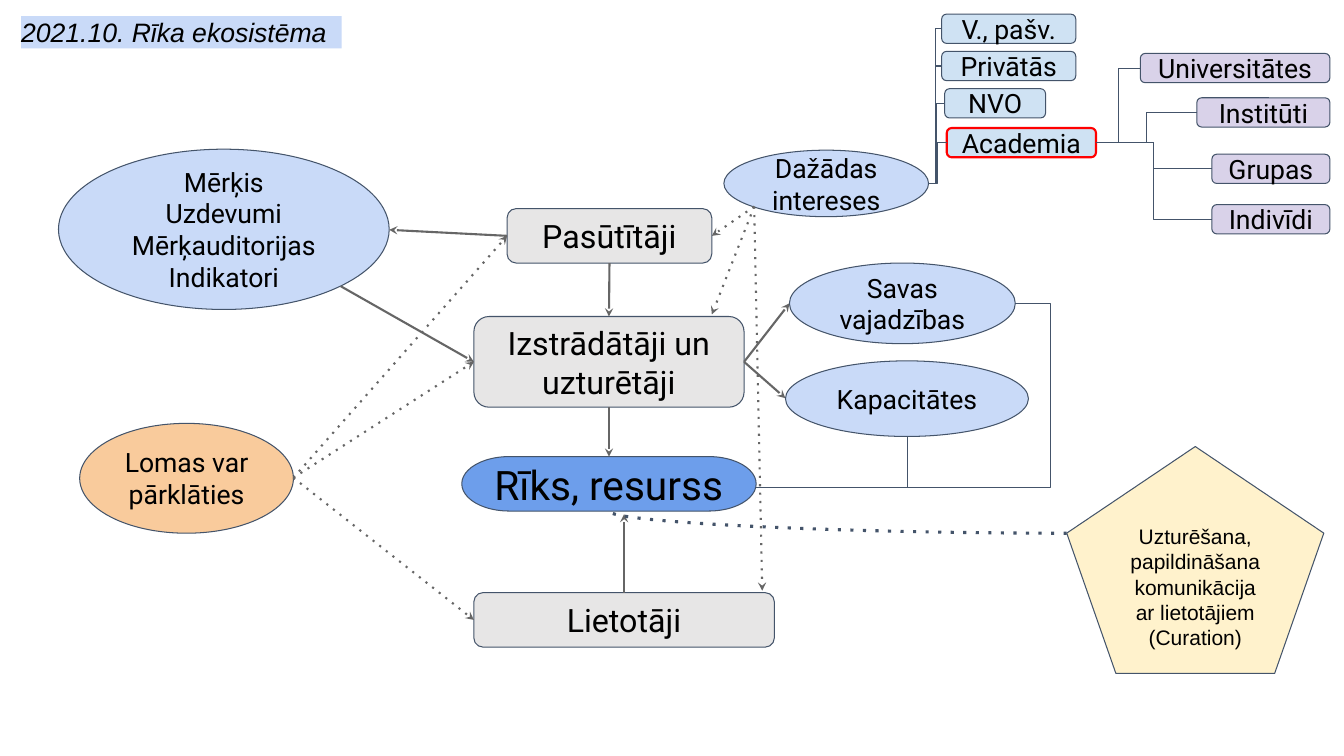
import pptx
import pptx.util
import pptx.dml.color
import pptx.enum.shapes
import pptx.enum.text
import pptx.oxml.ns
from lxml import etree

SHAPE = pptx.enum.shapes.MSO_SHAPE
LINK = pptx.enum.shapes.MSO_CONNECTOR
Inches, Pt = pptx.util.Inches, pptx.util.Pt
qn = pptx.oxml.ns.qn

COLORS = {
    "ink": "000000", "outline": "44546A", "arrow": "666666", "alert": "FF0000",
    "grey": "E7E6E6", "pale blue": "C9DAF8", "sky": "CFE2F3", "lilac": "D9D2E9",
    "blue": "6D9EEB", "orange": "F9CB9C", "cream": "FFF2CC",
}
TITLE = ("2021.10. Rīka ekosistēma", (0.21, 0.16, 3.18, 0.32))

# kind: preset shape, fill, font, text size
KINDS = {
    "role": (SHAPE.ROUNDED_RECTANGLE, "grey", "Roboto", 23),
    "topic": (SHAPE.FLOWCHART_CONNECTOR, "pale blue", "Roboto", 19),
    "overlap": (SHAPE.FLOWCHART_CONNECTOR, "orange", "Roboto", 19),
    "sector": (SHAPE.ROUNDED_RECTANGLE, "sky", "Roboto", 19),
    "unit": (SHAPE.ROUNDED_RECTANGLE, "lilac", "Roboto", 19),
    "tool": (SHAPE.FLOWCHART_TERMINATOR, "blue", "Roboto", 29),
    "curation": (SHAPE.REGULAR_PENTAGON, "cream", "Arial", 15),
}
TAG_H = 0.29
UNIT_RIGHT = 13.19
SECTORS = [  # text, left, top, width
    ("V., pašv.", 9.34, 0.14, 1.33),
    ("Privātās", 9.34, 0.51, 1.33),
    ("NVO", 9.37, 0.88, 1.0),
    ("Academia", 9.39, 1.27, 1.48),
]
UNITS = [  # text, top, width
    ("Universitātes", 0.53, 1.88),
    ("Institūti", 0.97, 1.32),
    ("Grupas", 1.53, 1.17),
    ("Indivīdi", 2.03, 1.17),
]
NODES = {  # name: kind, text, left, top, width, height
    "needs": ("topic", "Savas vajadzības", 7.83, 2.61, 2.24, 0.8),
    "makers": ("role", "Izstrādātāji un uzturētāji", 4.7, 3.14, 2.68, 0.9),
    "clients": ("role", "Pasūtītāji", 5.03, 2.07, 2.03, 0.54),
    "users": ("role", "Lietotāji", 4.7, 5.88, 2.98, 0.54),
    "goals": ("topic", "Mērķis\nUzdevumi\nMērķauditorijas\nIndikatori", 0.58, 1.48, 3.28, 1.59),
    "capacity": ("topic", "Kapacitātes", 7.79, 3.58, 2.41, 0.75),
    "interests": ("topic", "Dažādas intereses", 7.18, 1.49, 2.03, 0.66),
    "curation": ("curation", "Uzturēšana, papildināšana\vkomunikācija ar lietotājiem (Curation)",
                 10.58, 4.43, 2.55, 2.25),
    "tool": ("tool", "Rīks, resurss", 4.58, 4.53, 2.92, 0.54),
    "overlap": ("overlap", "Lomas var pārklāties", 0.79, 4.2, 2.12, 1.09),
}
TOP, LEFT, BOTTOM, RIGHT = range(4)
ROLES_HUB = (2.91, 4.74)
INTEREST_HUB = (7.48, 2.05)
# An end is a point or (node name, side)
SOLID_ARROWS = [
    (("makers", RIGHT), (7.83, 3.01)),
    (("makers", RIGHT), (7.79, 3.95)),
    (("clients", BOTTOM), ("makers", TOP)),
    (("makers", BOTTOM), ("tool", TOP)),
    (("clients", LEFT), (3.86, 2.28)),
    (("users", TOP), (6.19, 5.1)),
    ((3.38, 2.84), ("makers", LEFT)),
]
DOTTED_ARROWS = [
    (ROLES_HUB, ("clients", LEFT)),
    (ROLES_HUB, ("makers", LEFT)),
    (ROLES_HUB, ("users", LEFT)),
    (INTEREST_HUB, ("clients", RIGHT)),
    (INTEREST_HUB, (7.06, 3.12)),
    (INTEREST_HUB, (7.56, 5.86)),
]


def rgb(name):
    return pptx.dml.color.RGBColor.from_string(COLORS[name])


def write(sp, text, font, size, align, inset, italic=None):
    tf = sp.text_frame
    tf.word_wrap = True
    tf.margin_left = tf.margin_right = tf.margin_top = tf.margin_bottom = Inches(inset)
    tf.text = text
    for p in tf.paragraphs:
        p.alignment = align
        for r in p.runs:
            r.font.name, r.font.size, r.font.italic = font, Pt(size), italic
            r.font.color.rgb = rgb("ink")


def add_node(slide, kind, text, *box):
    preset, fill, font, size = KINDS[kind]
    sp = slide.shapes.add_shape(preset, *map(Inches, box))
    sp.shadow.inherit = False
    sp.fill.solid()
    sp.fill.fore_color.rgb = rgb(fill)
    sp.line.color.rgb = rgb("outline")
    sp.line.width = Pt(0.75)
    write(sp, text, font, size, pptx.enum.text.PP_ALIGN.CENTER, 0.13)
    sp.text_frame.vertical_anchor = pptx.enum.text.MSO_ANCHOR.MIDDLE
    return sp


def add_link(slide, nodes, start, end, link=LINK.STRAIGHT, color="outline",
             width=0.75, dotted=False, arrow=False, preset=None, bend=None):
    """Join two ends; preset overrides the geometry, bend places the elbow."""
    points = [(0, 0) if isinstance(e[0], str) else e for e in (start, end)]
    cx = slide.shapes.add_connector(link, *(Inches(v) for pt in points for v in pt))
    for e, join in ((start, cx.begin_connect), (end, cx.end_connect)):
        if isinstance(e[0], str):
            join(nodes[e[0]], e[1])
    cx.line.color.rgb = rgb(color)
    cx.line.width = Pt(width)
    sp_pr = cx._element.spPr
    ln = sp_pr.find(qn("a:ln"))
    if dotted:
        etree.SubElement(ln, qn("a:prstDash"), val="dot")
    if arrow:
        etree.SubElement(ln, qn("a:tailEnd"), type="stealth")
    etree.SubElement(sp_pr, qn("a:effectLst"))
    geom = sp_pr.find(qn("a:prstGeom"))
    if preset:
        geom.set("prst", preset)
    if bend is not None:
        guides = geom.find(qn("a:avLst"))
        etree.SubElement(guides, qn("a:gd"), name="adj1", fmla=f"val {round(bend * 100000)}")


def main():
    prs = pptx.Presentation()
    prs.slide_width, prs.slide_height = Inches(13.33), Inches(7.5)
    slide = prs.slides.add_slide(prs.slide_layouts[6])

    text, box = TITLE
    title = slide.shapes.add_textbox(*map(Inches, box))
    title.fill.solid()
    title.fill.fore_color.rgb = rgb("pale blue")
    write(title, text, "Arial", 19, pptx.enum.text.PP_ALIGN.LEFT, 0, italic=True)

    nodes = {name: add_node(slide, *node) for name, node in NODES.items()}

    for text, left, top, width in SECTORS:
        sector = add_node(slide, "sector", text, left, top, width, TAG_H)
        add_link(slide, nodes, (9.21, 1.82), (left, top + TAG_H / 2), LINK.ELBOW)
    sector.line.color.rgb = rgb("alert")
    sector.line.width = Pt(1.5)

    academia_right = (left + width, top + TAG_H / 2)
    for text, top, width in UNITS:
        left = UNIT_RIGHT - width
        add_node(slide, "unit", text, left, top, width, TAG_H)
        add_link(slide, nodes, academia_right, (left, top + TAG_H / 2), LINK.ELBOW)

    for arrows, dotted in ((SOLID_ARROWS, False), (DOTTED_ARROWS, True)):
        for start, end in arrows:
            add_link(slide, nodes, start, end, color="arrow", width=1.5,
                     dotted=dotted, arrow=True)

    add_link(slide, nodes, (10.07, 3.01), (7.5, 4.84), LINK.ELBOW, bend=-0.135)
    add_link(slide, nodes, (7.5, 4.84), (9, 4.33), LINK.ELBOW, preset="bentConnector2")
    add_link(slide, nodes, (10.58, 5.29), (6.04, 5.07), LINK.CURVE, width=2.25,
             dotted=True, preset="curvedConnector2")
    prs.save("out.pptx")


if __name__ == "__main__":
    main()
